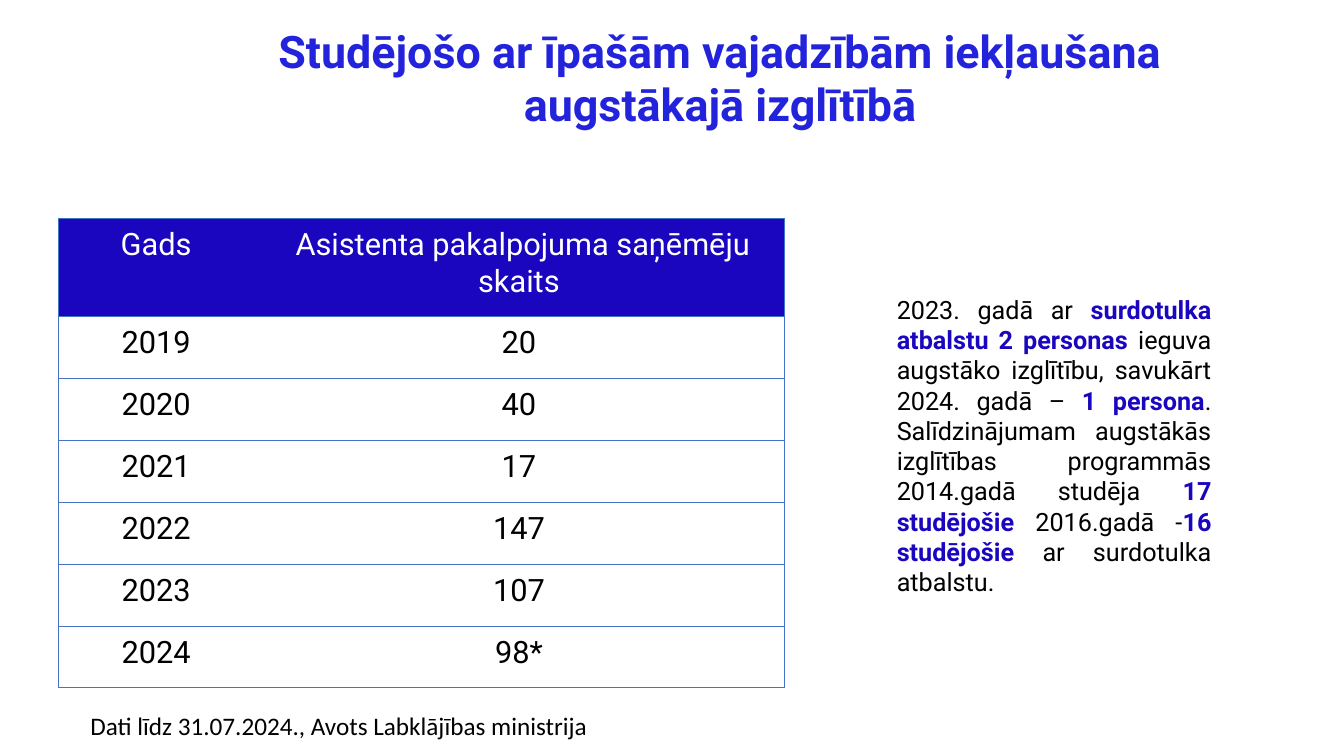
from lxml.etree import SubElement
from pptx import Presentation
from pptx.dml.color import RGBColor
from pptx.enum.text import MSO_ANCHOR, MSO_AUTO_SIZE, PP_ALIGN
from pptx.oxml.ns import qn
from pptx.util import Cm, Pt

BLUE = RGBColor(0x23, 0x23, 0xDC)
NAVY = RGBColor(0x1A, 0x06, 0xBF)
LINE = RGBColor(0x44, 0x72, 0xC4)
WHITE = RGBColor(0xFF, 0xFF, 0xFF)
BLACK = RGBColor(0, 0, 0)

TITLE = "Studējošo ar īpašām vajadzībām iekļaušana augstākajā izglītībā"
ROWS = [
    ("Gads ", "Asistenta pakalpojuma saņēmēju skaits "),
    ("2019 ", "20 "),
    ("2020 ", "40 "),
    ("2021 ", "17 "),
    ("2022 ", "147 "),
    ("2023 ", "107 "),
    ("2024 ", "98* "),
]
SOURCE = "Dati līdz 31.07.2024., Avots Labklājības ministrija"
STORY = [
    ("2023. gadā ar ", False),
    ("surdotulka atbalstu 2 personas ", True),
    ("ieguva augstāko izglītību, savukārt 2024. gadā – ", False),
    ("1 persona", True),
    (". Salīdzinājumam augstākās izglītības programmās 2014.gadā studēja ", False),
    ("17 studējošie ", True),
    ("2016.gadā -", False),
    ("16 studējošie ", True),
    ("ar surdotulka atbalstu. ", False),
]
WIDTHS = [Cm(5.1), Cm(13.19)]
HEAD, ROW = Cm(2.47), Cm(1.56)


def style(run, size, color, bold=False, name="Roboto"):
    font = run.font
    font.name, font.size, font.bold = name, Pt(size), bold
    font.color.rgb = color


def place(shape, left, top, width, height):
    shape.left, shape.top = Cm(left), Cm(top)
    shape.width, shape.height = Cm(width), Cm(height)


def add_box(slide, *area):
    frame = slide.shapes.add_textbox(*map(Cm, area)).text_frame
    frame.word_wrap = True
    return frame.paragraphs[0]


def add_edge(cell, side, shown):
    edge = SubElement(cell._tc.get_or_add_tcPr(), qn(f"a:ln{side}"), w=str(Pt(0.5)))
    if shown:
        fill = SubElement(edge, qn("a:solidFill"))
        SubElement(fill, qn("a:srgbClr"), val=str(LINE))
    else:
        SubElement(edge, qn("a:noFill"))


def fill_cell(cell, text, row, col):
    for side, shown in (("L", col == 0), ("R", col == 1), ("T", True), ("B", True)):
        add_edge(cell, side, shown)
    cell.margin_left = cell.margin_right = Cm(0.46)
    cell.margin_top = cell.margin_bottom = Cm(0.23)
    if row == 0:
        cell.fill.solid()
        cell.fill.fore_color.rgb = NAVY
    else:
        cell.fill.background()
    para = cell.text_frame.paragraphs[0]
    para.text = text
    para.alignment = PP_ALIGN.CENTER
    style(para.runs[0], 22, BLACK if row else WHITE)


def main():
    deck = Presentation()
    deck.slide_width, deck.slide_height = Cm(33.87), Cm(19.05)
    slide = deck.slides.add_slide(deck.slide_layouts[5])

    title = slide.shapes.title
    place(title, 3.89, 0.46, 28.52, 3)
    frame = title.text_frame
    frame.text = TITLE
    frame.word_wrap = True
    frame.auto_size = MSO_AUTO_SIZE.NONE
    frame.vertical_anchor = MSO_ANCHOR.TOP
    frame.paragraphs[0].alignment = PP_ALIGN.CENTER
    style(frame.paragraphs[0].runs[0], 32, BLUE, True)

    tall = HEAD + ROW * (len(ROWS) - 1)
    table = slide.shapes.add_table(
        len(ROWS), len(WIDTHS), Cm(1.48), Cm(5.5), sum(WIDTHS), tall
    ).table
    table.first_row = table.horz_banding = False
    for col, width in enumerate(WIDTHS):
        table.columns[col].width = width
    for row, texts in enumerate(ROWS):
        table.rows[row].height = ROW if row else HEAD
        for col, text in enumerate(texts):
            fill_cell(table.cell(row, col), text, row, col)

    note = add_box(slide, 2.03, 17.78, 17.58, 1.02)
    note.text = SOURCE
    style(note.runs[0], 18, BLACK, name="Calibri")

    story = add_box(slide, 22.35, 7.29, 8.43, 8.71)
    story.alignment = PP_ALIGN.JUSTIFY
    for text, strong in STORY:
        run = story.add_run()
        run.text = text
        style(run, 18, NAVY if strong else BLACK, strong)

    deck.save("out.pptx")


if __name__ == "__main__":
    main()
